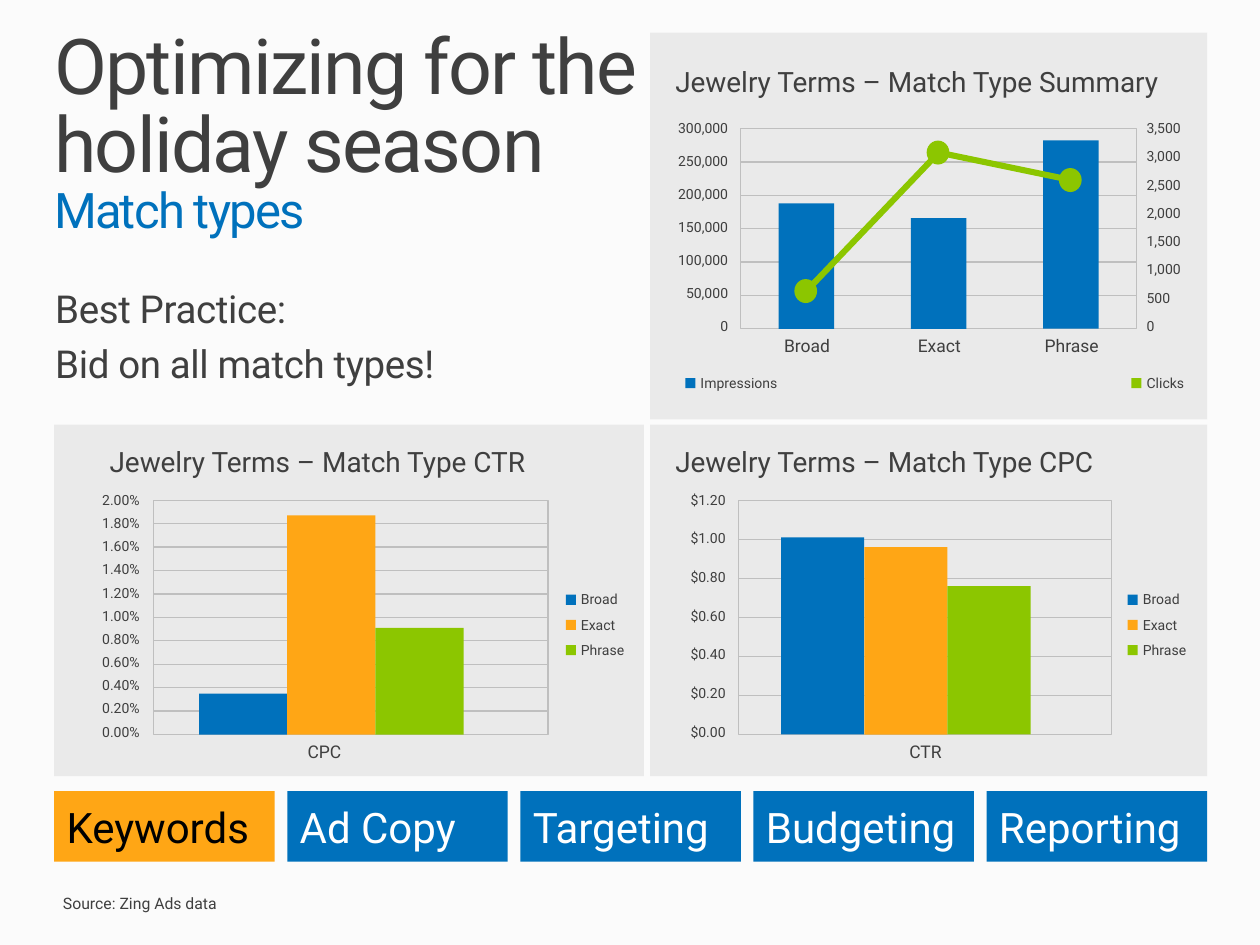
from dataclasses import dataclass

import pptx
import pptx.dml.color
import pptx.enum.shapes
import pptx.enum.text
import pptx.oxml
import pptx.oxml.ns
import pptx.util

Inches = pptx.util.Inches
Align = pptx.enum.text.PP_ALIGN
Anchor = pptx.enum.text.MSO_ANCHOR
Preset = pptx.enum.shapes.MSO_SHAPE


@dataclass(frozen=True)
class Theme:
    font: str = "Roboto"
    page: str = "FBFBFB"
    ink: str = "3F3F3F"
    panel: str = "DADADA"
    grid: str = "BFBFBF"
    blue: str = "0071BC"
    orange: str = "FFA615"
    green: str = "8CC600"
    white: str = "FFFFFF"
    black: str = "000000"
    title: float = 44
    subtitle: float = 28
    tile: float = 24
    body: float = 22
    heading: float = 16
    category: float = 10
    source: float = 9
    small: float = 8


@dataclass(frozen=True)
class Area:
    left: float
    top: float
    width: float
    height: float

    def lengths(self) -> list:
        return [Inches(v) for v in (self.left, self.top, self.width, self.height)]


@dataclass(frozen=True)
class LegendKey:
    label: str
    color: str
    left: float
    top: float


@dataclass(frozen=True)
class Chart:
    heading: str
    heading_left: float
    panel: Area
    plot: Area
    ticks: list[str]
    ticks_left: float
    ticks_width: float
    maximum: float
    values: list[float]
    colors: list[str]
    first_bar: float
    bar_width: float
    bar_pitch: float
    categories: list[tuple[str, float]]  # label and its centre
    legend: list[LegendKey]


THEME = Theme()
SERIES = [THEME.blue, THEME.orange, THEME.green]
MATCH_TYPES = ["Broad", "Exact", "Phrase"]


def rgb(color: str) -> pptx.dml.color.RGBColor:
    return pptx.dml.color.RGBColor.from_string(color)


def add_span(para, text: str, size: float, color: str = THEME.ink, spacing: float = 0) -> None:
    span = para.add_run()
    span.text = text
    values = {"name": THEME.font, "size": pptx.util.Pt(size), "bold": False}
    for name, value in values.items():
        setattr(span.font, name, value)
    span.font.color.rgb = rgb(color)
    if spacing:
        span._r.get_or_add_rPr().set("spc", str(round(spacing * 100)))


def format_frame(frame, inset: float = 0, anchor=Anchor.TOP, wrap: bool = True) -> None:
    values = {"word_wrap": wrap, "vertical_anchor": anchor}
    for side in ("left", "right", "top", "bottom"):
        values[f"margin_{side}"] = Inches(inset)
    for name, value in values.items():
        setattr(frame, name, value)


def add_label(page, area: Area, text: str, size: float, align=Align.LEFT, wrap: bool = True) -> None:
    frame = page.shapes.add_textbox(*area.lengths()).text_frame
    format_frame(frame, wrap=wrap)
    para = frame.paragraphs[0]
    para.alignment = align
    add_span(para, text, size)


def add_block(page, area: Area, fill: str | None = None, line: str | None = None,
              preset=Preset.RECTANGLE):
    block = page.shapes.add_shape(preset, *area.lengths())
    block.shadow.inherit = False
    if fill:
        block.fill.solid()
        block.fill.fore_color.rgb = rgb(fill)
    else:
        block.fill.background()
    if line:
        block.line.color.rgb = rgb(line)
        block.line.width = pptx.util.Pt(0.75)
    else:
        block.line.fill.background()
    return block


def add_line(page, start: tuple[float, float], end: tuple[float, float], color: str, width: float) -> None:
    line = page.shapes.add_connector(pptx.enum.shapes.MSO_CONNECTOR.STRAIGHT,
                                     *[Inches(v) for v in (*start, *end)])
    line.line.color.rgb = rgb(color)
    line.line.width = pptx.util.Pt(width)
    line._element.spPr.append(pptx.oxml.parse_xml(f"<a:effectLst {pptx.oxml.ns.nsdecls('a')}/>"))


def add_panel(page, area: Area) -> None:
    panel = add_block(page, area, THEME.panel)
    color = panel._element.spPr.find(".//" + pptx.oxml.ns.qn("a:srgbClr"))
    color.append(pptx.oxml.parse_xml(f'<a:alpha {pptx.oxml.ns.nsdecls("a")} val="50000"/>'))


def add_ticks(page, plot: Area, ticks: list[str], left: float, width: float, align) -> None:
    pitch = (plot.height - 0.02) / (len(ticks) - 1)
    for index, tick in enumerate(ticks):
        add_label(page, Area(left, plot.top - 0.07 + index * pitch, width, 0.13),
                  tick, THEME.small, align)


def add_bar_chart(page, chart: Chart) -> None:
    plot = chart.plot
    bottom = plot.top + plot.height
    add_panel(page, chart.panel)
    add_label(page, Area(chart.heading_left, chart.panel.top + (0.25 if chart.panel.top < 1 else 0.16),
                         4.1, 0.27), chart.heading, THEME.heading)
    # Frame, grid and value axis
    add_block(page, plot, line=THEME.grid)
    steps = len(chart.ticks) - 1
    for index in range(1, steps):
        y = plot.top + plot.height * index / steps
        add_line(page, (plot.left, y), (plot.left + plot.width, y), THEME.grid, 0.75)
    add_ticks(page, plot, chart.ticks, chart.ticks_left, chart.ticks_width, Align.RIGHT)
    # Bars, categories and legend
    for index, (value, color) in enumerate(zip(chart.values, chart.colors)):
        height = plot.height * value / chart.maximum
        left = chart.first_bar + index * chart.bar_pitch
        add_block(page, Area(left, bottom - height, chart.bar_width, height), color)
    for label, center in chart.categories:
        add_label(page, Area(center - 0.26, bottom + 0.05, 0.53, 0.17),
                  label, THEME.category, Align.CENTER)
    for key in chart.legend:
        add_block(page, Area(key.left, key.top, 0.08, 0.08), key.color)
        add_label(page, Area(key.left + 0.12, key.top - 0.03, 0.7 if len(key.label) > 6 else 0.42, 0.13),
                  key.label, THEME.small)


def add_clicks(page, plot: Area, centers: list[float], clicks: list[float]) -> None:
    ticks = [f"{value:,}" for value in range(3500, -1, -500)]
    add_ticks(page, plot, ticks, 9.1, 0.42, Align.LEFT)
    points = [(x, plot.top + plot.height * (1 - value / 3500)) for x, value in zip(centers, clicks)]
    for start, end in zip(points, points[1:]):
        add_line(page, start, end, THEME.green, 3.5)
    for x, y in points:
        add_block(page, Area(x - 0.09, y - 0.09, 0.17, 0.18), THEME.green, THEME.green, Preset.OVAL)


def side_legend(left: float) -> list[LegendKey]:
    return [LegendKey(label, color, left, 4.72 + 0.2 * index)
            for index, (label, color) in enumerate(zip(MATCH_TYPES, SERIES))]


def main() -> None:
    deck = pptx.Presentation()
    deck.slide_width, deck.slide_height = Inches(10), Inches(7.5)
    page = deck.slides.add_slide(deck.slide_layouts[5])
    page.background.fill.solid()
    page.background.fill.fore_color.rgb = rgb(THEME.page)

    # Title and advice
    title = page.shapes.title
    title.left, title.top, title.width, title.height = Area(0.43, 0.25, 4.73, 1.66).lengths()
    format_frame(title.text_frame)
    para = title.text_frame.paragraphs[0]
    para.alignment, para.line_spacing = Align.LEFT, 0.85
    add_span(para, "Optimizing for the holiday season", THEME.title, spacing=-1)
    para.add_line_break()
    add_span(para, "Match types", THEME.subtitle, THEME.blue, -1)
    advice = page.shapes.add_textbox(*Area(0.34, 2.21, 4.84, 1.15).lengths()).text_frame
    format_frame(advice, 0.1)
    advice.margin_top = Inches(0.05)
    add_span(advice.paragraphs[0], "Best Practice:", THEME.body, spacing=-0.2)
    para = advice.add_paragraph()
    para.space_before = pptx.util.Pt(5)
    add_span(para, "Bid on all match types!", THEME.body, spacing=-0.2)

    # Charts
    centers = [6.4, 7.45, 8.5]
    summary = Chart(
        "Jewelry Terms – Match Type Summary", 5.36, Area(5.16, 0.26, 4.42, 3.07),
        Area(5.88, 1.02, 3.14, 1.59), [f"{value:,}" for value in range(300000, -1, -50000)],
        5.36, 0.42, 300000, [188000, 166000, 282000], [THEME.blue] * 3, 6.18, 0.44, 1.05,
        list(zip(MATCH_TYPES, centers)),
        [LegendKey("Impressions", THEME.blue, 5.44, 3), LegendKey("Clicks", THEME.green, 8.98, 3)])
    cost = Chart(
        "Jewelry Terms – Match Type CPC", 5.36, Area(5.16, 3.37, 4.42, 2.79),
        Area(5.86, 3.97, 2.96, 1.86), [f"${value / 10:.2f}" for value in range(12, -1, -2)],
        5.34, 0.42, 1.2, [1.01, 0.96, 0.76], SERIES, 6.2, 0.66, 0.66,
        [("CTR", 7.34)], side_legend(8.95))
    rate = Chart(
        "Jewelry Terms – Match Type CTR", 0.87, Area(0.43, 3.37, 4.68, 2.79),
        Area(1.22, 3.97, 3.13, 1.86), [f"{value / 10:.2f}%" for value in range(20, -1, -2)],
        0.66, 0.45, 2, [0.35, 1.87, 0.91], SERIES, 1.58, 0.7, 0.7,
        [("CPC", 2.57)], side_legend(4.49))
    for chart in (summary, cost, rate):
        add_bar_chart(page, chart)
    add_clicks(page, summary.plot, centers, [660, 3080, 2600])

    # Topic tiles
    for index, topic in enumerate(["Keywords", "Ad Copy", "Targeting", "Budgeting", "Reporting"]):
        fill, ink = (THEME.blue, THEME.white) if index else (THEME.orange, THEME.black)
        tile = add_block(page, Area(0.43 + 1.85 * index, 6.28, 1.75, 0.56), fill)
        format_frame(tile.text_frame, 0.1, Anchor.MIDDLE)
        tile.text_frame.paragraphs[0].alignment = Align.LEFT
        add_span(tile.text_frame.paragraphs[0], topic, THEME.tile, ink)

    # Source line
    add_label(page, Area(0.5, 7.09, 4.83, 0.28), "Source: Zing Ads data", THEME.source, wrap=False)
    deck.save("out.pptx")


if __name__ == "__main__":
    main()
